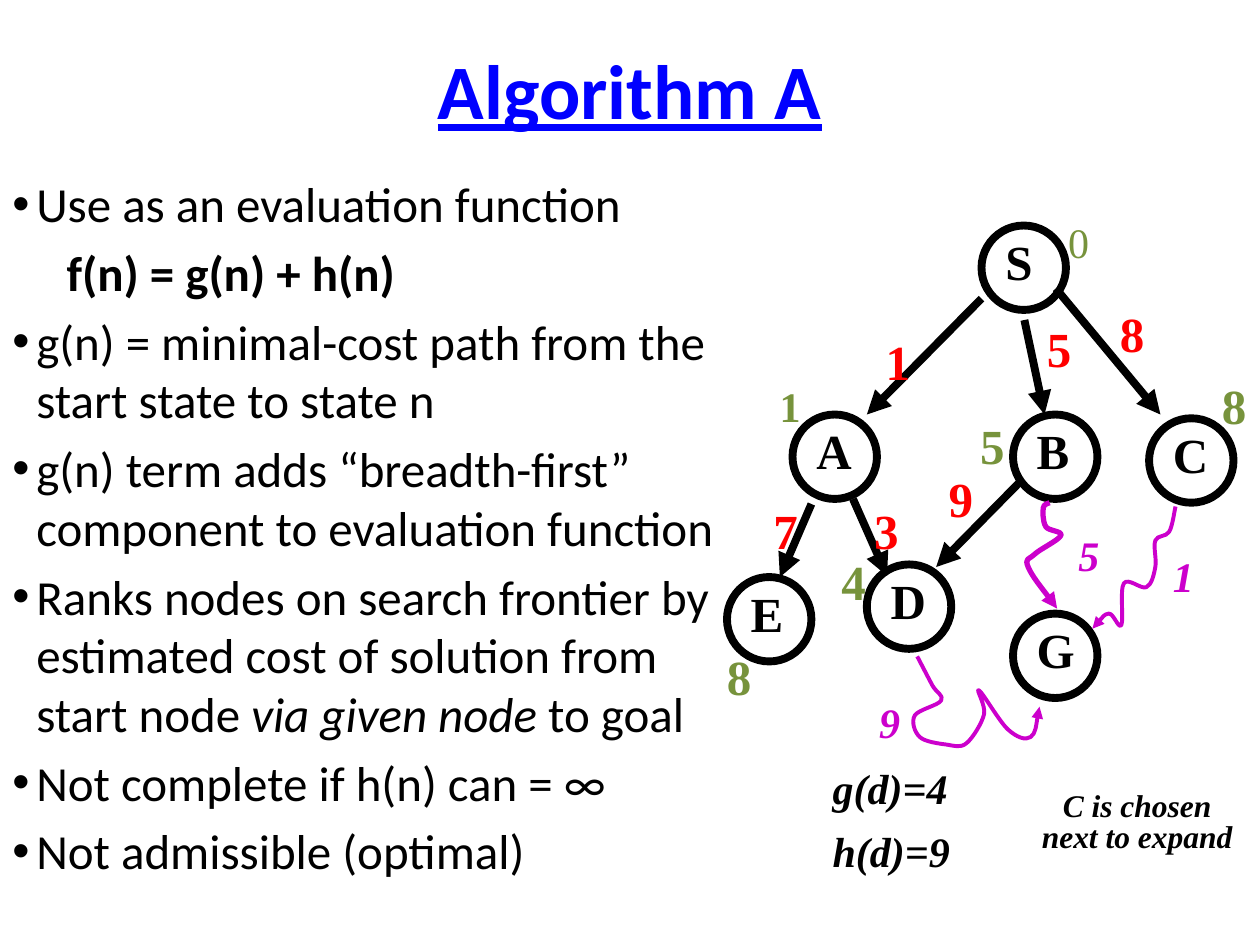
"""Build the Algorithm A slide: evaluation function notes beside a search graph."""
import pptx
import pptx.dml.color
import pptx.enum.shapes
import pptx.enum.text
import pptx.oxml.ns
import pptx.util
from pptx.util import Inches

BLACK = pptx.dml.color.RGBColor(0x00, 0x00, 0x00)
BLUE = pptx.dml.color.RGBColor(0x00, 0x00, 0xFF)
RED = pptx.dml.color.RGBColor(0xFF, 0x00, 0x00)
GREEN = pptx.dml.color.RGBColor(0x77, 0x93, 0x3C)
PURPLE = pptx.dml.color.RGBColor(0xCC, 0x00, 0xCC)

NODE_SIZE = 0.67
LETTER_INSET = 0.09
LARGE, MEDIUM, SMALL = 28, 24, 18
COST_BOX = {LARGE: (0.4, 0.57), MEDIUM: (0.37, 0.5)}
BULLET_INDENT, FORMULA_INDENT = 0.19, 0.62
qn = pptx.oxml.ns.qn


def add_text(text, left, top, width, height, size, color=BLACK, bold=True, italic=False, wrap=False):
    box = slide.shapes.add_textbox(Inches(left), Inches(top), Inches(width), Inches(height))
    frame = box.text_frame
    frame.word_wrap = wrap
    frame.text = text
    for para in frame.paragraphs:
        font = para.font
        font.name, font.size, font.bold, font.italic = "Times New Roman", pptx.util.Pt(size), bold, italic
        font.color.rgb = color
    return frame


def style_arrow(arrow, color, width):
    arrow.line.color.rgb = color
    arrow.line.width = pptx.util.Pt(width)
    properties = arrow._element.spPr
    line = properties.find(qn("a:ln"))
    line.append(line.makeelement(qn("a:tailEnd"), {"type": "triangle"}))
    properties.append(properties.makeelement(qn("a:effectLst"), {}))


deck = pptx.Presentation()
deck.slide_width, deck.slide_height = Inches(10), Inches(7.5)
slide = deck.slides.add_slide(deck.slide_layouts[5])

title = slide.shapes.title
title.left, title.top, title.width, title.height = map(Inches, (0.75, 0.08, 8.5, 1.25))
title.text_frame.text = "Algorithm A"
title.text_frame.vertical_anchor = pptx.enum.text.MSO_ANCHOR.MIDDLE
heading = title.text_frame.paragraphs[0]
heading.alignment = pptx.enum.text.PP_ALIGN.CENTER
heading.font.name, heading.font.size = "Calibri", pptx.util.Pt(44)
heading.font.bold = heading.font.underline = True
heading.font.color.rgb = BLUE

formula = "f(n) = g(n) + h(n)"
emphasis = "via given node "
notes = [
    ["Use as an evaluation function"],
    [formula],
    ["g(n) = minimal-cost path from the start state to state n"],
    ["g(n) term adds “breadth-first” component to evaluation function"],
    ["Ranks nodes on search frontier by estimated cost of solution from start node ", emphasis, "to goal"],
    ["Not complete if h(n) can = ∞"],
    ["Not admissible (optimal)"],
]
body = slide.shapes.add_textbox(Inches(0), Inches(1.33), Inches(6), Inches(6)).text_frame
body.word_wrap = True
for index, parts in enumerate(notes):
    para = body.paragraphs[0] if index == 0 else body.add_paragraph()
    is_formula = parts == [formula]
    para.level = 1 if is_formula else 0
    para.font.name, para.font.size = "Calibri", pptx.util.Pt(LARGE)
    para.font.color.rgb = BLACK
    para.font.bold = is_formula
    para.space_before = pptx.util.Pt(0.2 * LARGE)
    for part in parts:
        span = para.add_run()
        span.text = part
        if part == emphasis:
            span.font.italic = True
    properties = para._p.get_or_add_pPr()
    properties.set("marL", str(Inches(FORMULA_INDENT if is_formula else BULLET_INDENT)))
    properties.set("indent", str(Inches(-BULLET_INDENT)))
    if not is_formula:
        for tag, attributes in (("a:buFont", {"typeface": "Arial"}), ("a:buChar", {"char": "•"})):
            bullet = properties.makeelement(qn(tag), attributes)
            properties.insert_element_before(bullet, "a:tabLst", "a:defRPr", "a:extLst")

node_places = {
    "S": (7.79, 1.79), "A": (6.29, 3.29), "B": (8.04, 3.29), "C": (9.12, 3.32),
    "E": (5.77, 4.58), "D": (6.88, 4.48), "G": (8.04, 4.87),
}
letter_widths = {"S": 0.42, "B": 0.46, "E": 0.46, "G": 0.5}
for name, (left, top) in node_places.items():
    node = slide.shapes.add_shape(pptx.enum.shapes.MSO_SHAPE.OVAL,
                                  *map(Inches, (left, top, NODE_SIZE, NODE_SIZE)))
    node.shadow.inherit = False
    node.fill.background()
    node.line.color.rgb = BLACK
    node.line.width = pptx.util.Pt(4.5)
    add_text(name, left + LETTER_INSET, top, letter_widths.get(name, 0.48), 0.57, LARGE)

edges = {
    "S to A": ((7.79, 2.37), (6.88, 3.29)),
    "S to B": ((8.13, 2.54), (8.29, 3.29)),
    "S to C": ((8.38, 2.29), (9.21, 3.29)),
    "A to D": ((6.77, 3.96), (7.04, 4.57)),
    "A to E": ((6.44, 4), (6.19, 4.58)),
    "B to D": ((8.09, 3.83), (7.43, 4.5)),
}
for start, end in edges.values():
    edge = slide.shapes.add_connector(pptx.enum.shapes.MSO_CONNECTOR.STRAIGHT, *map(Inches, start + end))
    style_arrow(edge, BLACK, 4.5)

estimated_routes = {
    "B to G": (3, [(8.33, 3.99), (8.28, 4.03), (8.3, 4.18), (8.42, 4.25), (8.21, 4.4), (8.16, 4.5),
                   (8.39, 4.83)]),
    "C to G": (2.25, [(9.33, 4.02), (9.28, 4.22), (9.17, 4.29), (9.17, 4.5), (9.1, 4.66), (8.92, 4.63),
                      (8.9, 4.96), (8.8, 4.87), (8.67, 4.99)]),
    "D to G": (2.25, [(7.28, 5.21), (7.4, 5.44), (7.47, 5.56), (7.26, 5.68), (7.3, 5.85), (7.51, 5.91),
                      (7.67, 5.9), (7.81, 5.67), (7.77, 5.48), (8, 5.79), (8.18, 5.85), (8.25, 5.61)]),
}
for width, bends in estimated_routes.values():
    padded = [bends[0], *bends, bends[-1]]
    curve_points = []
    for before, start, end, after in zip(padded, padded[1:], padded[2:], padded[3:]):
        leaving = [s + (e - b) / 6 for b, s, e in zip(before, start, end)]
        arriving = [e - (a - s) / 6 for s, e, a in zip(start, end, after)]
        curve_points += [tuple(map(Inches, point)) for point in (leaving, arriving, end)]
    builder = slide.shapes.build_freeform(*map(Inches, bends[0]))
    builder.add_line_segments(curve_points, close=False)
    route = builder.convert_to_shape()
    route.fill.background()
    segments = list(route._element.iter(qn("a:lnTo")))
    for first in range(0, len(segments), 3):
        curve = segments[first].makeelement(qn("a:cubicBezTo"), {})
        segments[first].addprevious(curve)
        for segment in segments[first:first + 3]:
            curve.append(segment[0])
            segment.getparent().remove(segment)
    style_arrow(route, PURPLE, width)

edge_costs = [("1", 6.93, 2.58), ("5", 8.21, 2.48), ("8", 8.79, 2.36),
              ("3", 6.84, 3.92), ("7", 6.04, 3.92), ("9", 7.43, 3.67)]
path_costs = [("5", 7.68, 3.25), ("8", 9.6, 2.93), ("4", 6.58, 4.33), ("8", 5.67, 5.08)]
start_costs = [("0", 8.38, 1.67)]
first_costs = [("1", 6.09, 2.97)]
goal_estimates = [("5", 8.46, 4.15), ("1", 9.21, 4.32), ("9", 6.88, 5.48)]
cost_styles = [
    (edge_costs, LARGE, RED, True, False),
    (path_costs, LARGE, GREEN, True, False),
    (start_costs, MEDIUM, GREEN, False, False),
    (first_costs, MEDIUM, GREEN, True, False),
    (goal_estimates, MEDIUM, PURPLE, True, True),
]
for costs, size, color, bold, italic in cost_styles:
    for cost, left, top in costs:
        add_text(cost, left, top, *COST_BOX[size], size, color, bold, italic)

values = add_text("g(d)=4\nh(d)=9", 6.51, 6.08, 1.58, 0.94, MEDIUM, italic=True, wrap=True)
choice = add_text("C is chosen next to expand", 8.13, 6.25, 1.79, 0.58, SMALL, italic=True, wrap=True)
choice.paragraphs[0].alignment = pptx.enum.text.PP_ALIGN.CENTER
for frame, space in ((values, 13), (choice, 10)):
    for para in frame.paragraphs:
        para.line_spacing = 0.8
        para.space_before = pptx.util.Pt(space)

deck.save("out.pptx")
